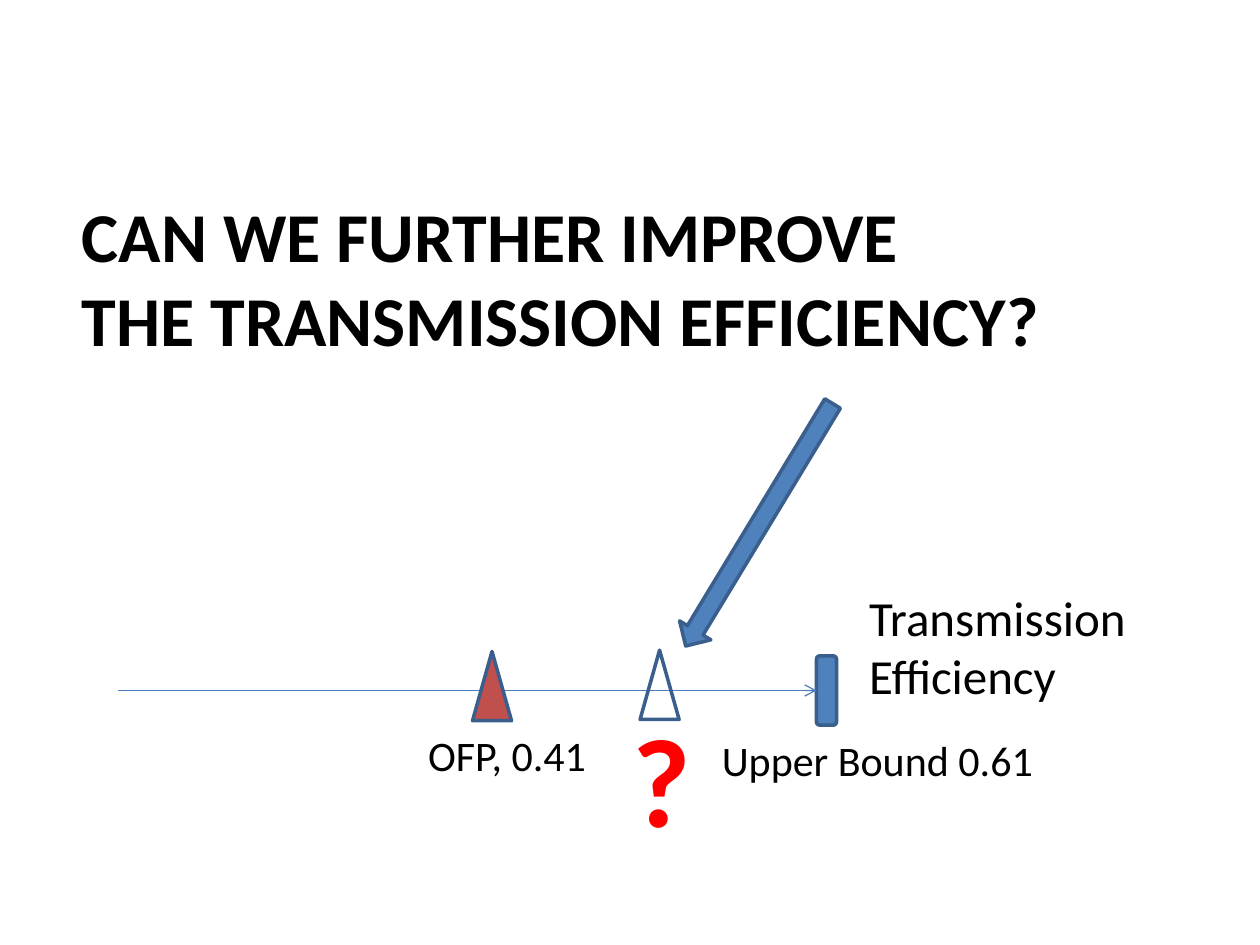
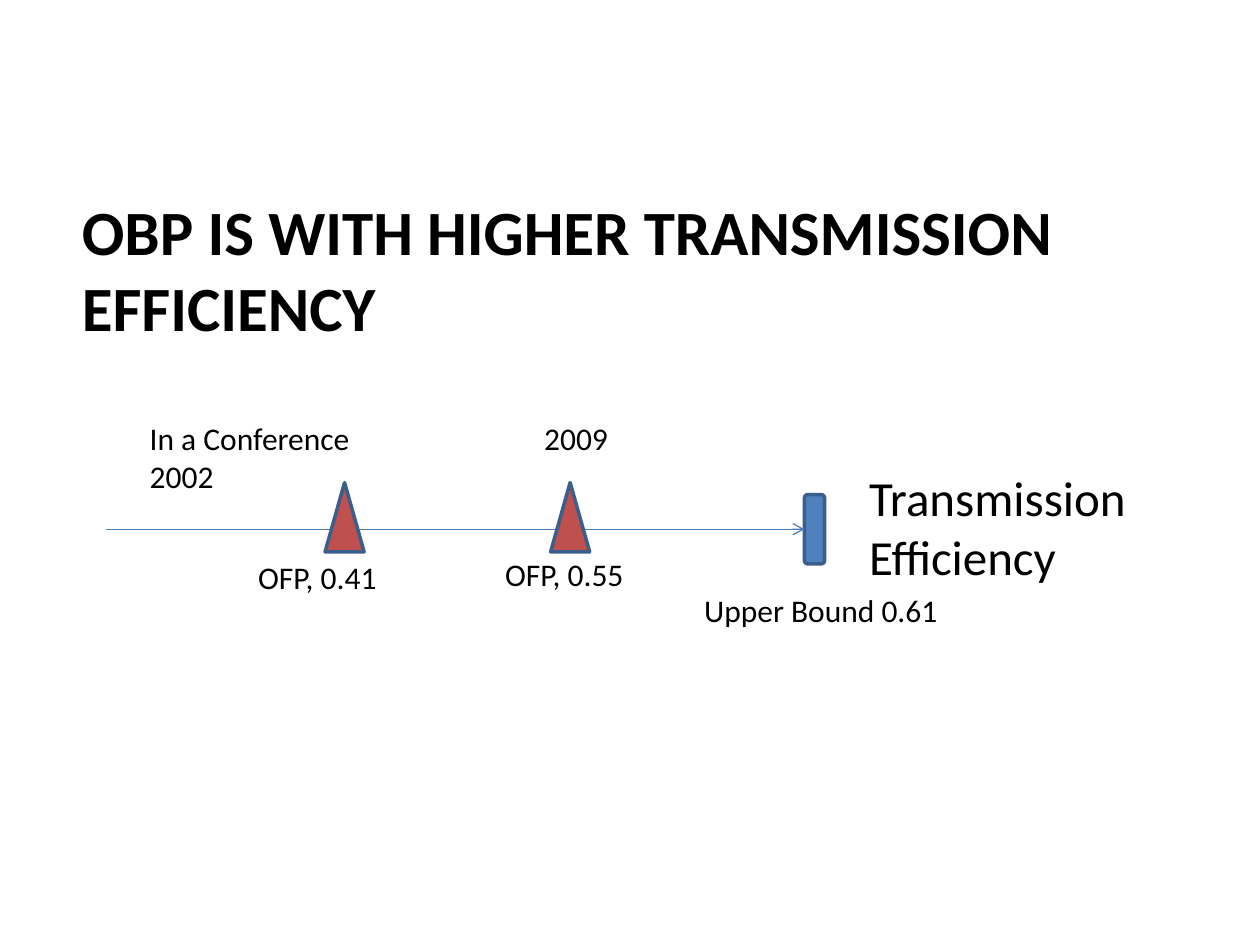
from dataclasses import dataclass

from lxml import etree
from pptx import Presentation
from pptx.dml.color import RGBColor
from pptx.enum.shapes import MSO_CONNECTOR, MSO_SHAPE
from pptx.enum.text import MSO_ANCHOR, MSO_AUTO_SIZE, PP_ALIGN
from pptx.oxml.ns import qn
from pptx.util import Inches, Pt

TRIANGLE = MSO_SHAPE.ISOSCELES_TRIANGLE
ROUNDED = MSO_SHAPE.ROUNDED_RECTANGLE
DOWN_ARROW = MSO_SHAPE.DOWN_ARROW
STRAIGHT = MSO_CONNECTOR.STRAIGHT
TOP, LEFT = MSO_ANCHOR.TOP, PP_ALIGN.LEFT
NO_FIT, GROW = MSO_AUTO_SIZE.NONE, MSO_AUTO_SIZE.SHAPE_TO_FIT_TEXT
LEFT_SIDE = 1
TITLE_ONLY = 5

WIDTH, HEIGHT = Inches(10), Inches(7.5)
COLS, ROWS = 100, 75
MARK_W, MARK_H, BAR_W = 3.1, 5.5, 1.6
AXIS_LEN = 55.4


@dataclass(frozen=True)
class Theme:
    """Colours, font and type sizes shared by the slides."""
    font: str = "Calibri"
    ink: str = "000000"
    alert: str = "FF0000"
    blue: str = "4F81BD"
    red: str = "C0504D"
    outline: str = "3A5F8C"
    axis: str = "4B7EBC"
    axis_pt: float = 0.75
    outline_pt: float = 2
    name_pt: int = 28
    question_pt: int = 72


THEME = Theme()


def col(n):
    """Convert grid columns to a length."""
    return round(WIDTH * n / COLS)


def row(n):
    """Convert grid rows to a length."""
    return round(HEIGHT * n / ROWS)


def box(x, y, w, h):
    """Convert a grid rectangle to left, top, width and height."""
    return col(x), row(y), col(w), row(h)


def apply(obj, values):
    """Set each named attribute of an object."""
    for name, value in values.items():
        setattr(obj, name, value)


def write(tf, lines, size, color=THEME.ink, bold=False):
    """Fill a text frame with one left-aligned paragraph a line."""
    for i, line in enumerate(lines):
        p = tf.add_paragraph() if i else tf.paragraphs[0]
        p.text = line
        p.alignment = LEFT
        apply(p.font, {"name": THEME.font, "size": Pt(size), "bold": bold})
        p.font.color.rgb = RGBColor.from_string(color)


def add_slide(prs, title, size):
    """Add a slide with its title in place."""
    slide = prs.slides.add_slide(prs.slide_layouts[TITLE_ONLY])
    sp = slide.shapes.title
    apply(sp, dict(zip(("left", "top", "width", "height"),
                       box(5.5, 14.8, 85, 14.9))))
    apply(sp.text_frame, {"vertical_anchor": TOP, "word_wrap": True,
                          "auto_size": NO_FIT})
    write(sp.text_frame, [title], size, bold=True)
    return slide


def add_label(slide, lines, at, size, wrap=False, **style):
    """Add a text box at a grid rectangle."""
    tf = slide.shapes.add_textbox(*box(*at)).text_frame
    apply(tf, {"word_wrap": wrap, "auto_size": GROW})
    write(tf, lines, size, **style)


def add_figure(slide, kind, at, fill=None, rotation=0):
    """Add an outlined preset shape, hollow when it has no fill."""
    sp = slide.shapes.add_shape(kind, *box(*at))
    sp.shadow.inherit = False
    sp.rotation = rotation
    if fill:
        sp.fill.solid()
        sp.fill.fore_color.rgb = RGBColor.from_string(fill)
    else:
        sp.fill.background()
    sp.line.color.rgb = RGBColor.from_string(THEME.outline)
    sp.line.width = Pt(THEME.outline_pt)
    return sp


def add_marker(slide, x, y, fill=None):
    """Add a triangle that marks a value on the axis."""
    add_figure(slide, TRIANGLE, (x, y, MARK_W, MARK_H), fill)


def add_axis(slide, x, y, name_y):
    """Add the efficiency axis, its upper-bound bar and its name."""
    end = x + AXIS_LEN
    bar = add_figure(slide, ROUNDED, (end, y - MARK_H / 2, BAR_W, MARK_H),
                     THEME.blue)
    line = slide.shapes.add_connector(STRAIGHT, col(x), row(y),
                                      col(end), row(y))
    line.end_connect(bar, LEFT_SIDE)
    line.line.color.rgb = RGBColor.from_string(THEME.axis)
    line.line.width = Pt(THEME.axis_pt)
    props = line._element.spPr
    etree.SubElement(props.find(qn("a:ln")), qn("a:tailEnd"), type="arrow")
    etree.SubElement(props, qn("a:effectLst"))
    add_label(slide, ["Transmission", "Efficiency"], (68, name_y, 27.3, 10.4),
              THEME.name_pt, wrap=True)


def build_question(prs):
    """Ask whether the efficiency can come closer to the bound."""
    slide = add_slide(
        prs, "CAN WE FURTHER IMPROVE\vTHE TRANSMISSION EFFICIENCY?", 40)
    add_axis(slide, 9.4, 54.8, 46.1)
    add_marker(slide, 37.5, 51.7, THEME.red)
    add_label(slide, ["?"], (49.2, 55.2, 6.7, 13.1), THEME.question_pt,
              color=THEME.alert, bold=True)
    add_label(slide, ["OFP, 0.41"], (33, 57.4, 14.6, 5), 24)
    add_label(slide, ["Upper Bound 0.61"], (56.3, 57.8, 26.9, 5), 24)
    add_figure(slide, DOWN_ARROW, (58.8, 30.4, 2.9, 22.5), THEME.blue, 31.2)
    add_marker(slide, 50.8, 51.6)


def build_answer(prs):
    """Place the two results and their years on the axis."""
    slide = add_slide(prs, "OBP IS WITH HIGHER TRANSMISSION EFFICIENCY", 36)
    add_axis(slide, 8.45, 42, 36.6)
    for x in (25.8, 43.7):
        add_marker(slide, x, 38.3, THEME.red)
    for text, x, y, w in (("OFP, 0.41", 19.5, 43.8, 11.5),
                          ("OFP, 0.55", 39.1, 43.6, 11.5),
                          ("Upper Bound 0.61", 54.9, 46.4, 20.8),
                          ("In a Conference 2002", 10.9, 32.8, 21.7),
                          ("2009", 42.2, 32.8, 7.1)):
        add_label(slide, [text], (x, y, w, 4), 18)


def main():
    """Build and save the presentation."""
    prs = Presentation()
    apply(prs, {"slide_width": WIDTH, "slide_height": HEIGHT})
    build_question(prs)
    build_answer(prs)
    prs.save("out.pptx")


if __name__ == "__main__":
    main()
